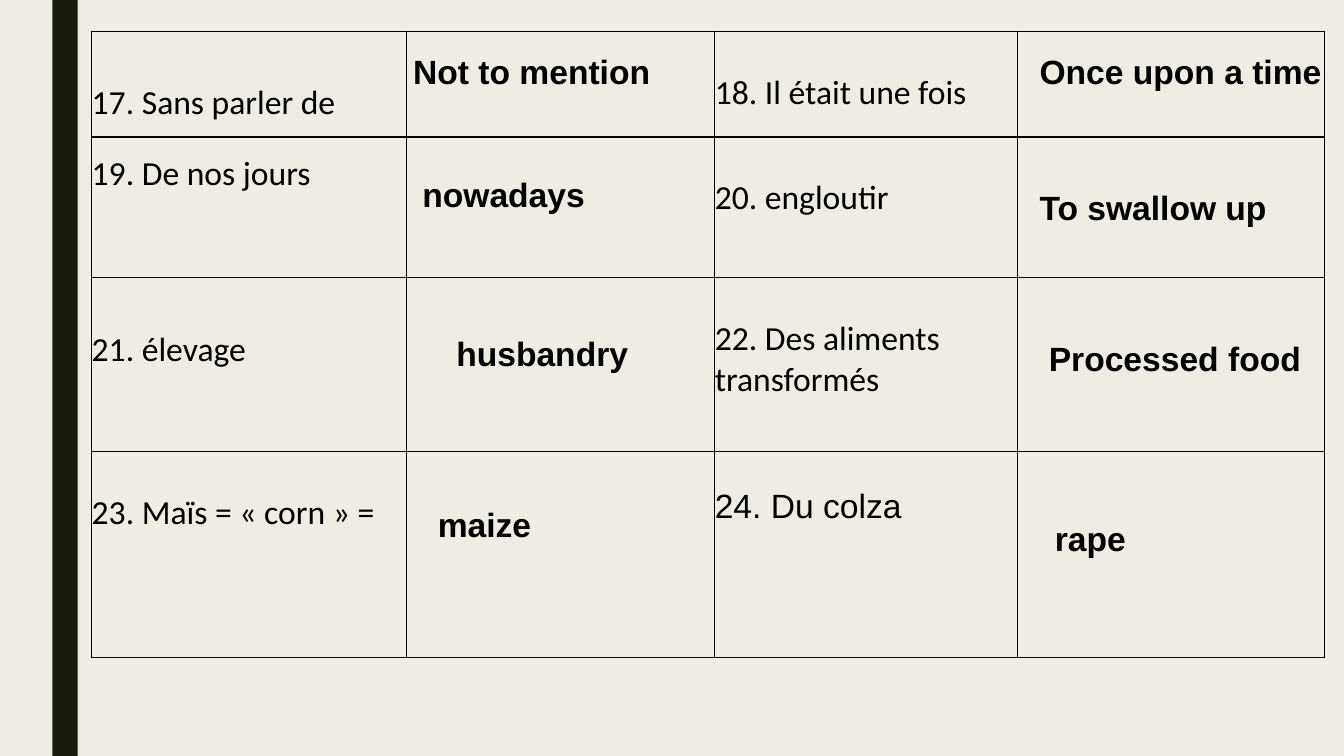
from dataclasses import dataclass

from lxml import etree
from pptx import Presentation
from pptx import util as u
from pptx.dml.color import RGBColor
from pptx.enum import shapes, text
from pptx.oxml import ns


@dataclass(frozen=True)
class Theme:
    paper: str = "EFEDE3"
    bar: str = "191B0E"
    ink: str = "000000"
    size: int = 24
    clue_font: str = "Calibri"
    answer_font: str = "Arial"
    border: int = 1


class VocabularySlide:
    """One page laid out on the columns and rows of its table."""

    def __init__(self, deck, theme, left, top, columns, rows):
        self.theme = theme
        self.columns, self.rows = columns, rows
        self.left, self.top = left, top
        self.height = deck.slide_height
        self.page = deck.slides.add_slide(deck.slide_layouts[6])
        fill = self.page.background.fill
        fill.solid()
        fill.fore_color.rgb = RGBColor.from_string(theme.paper)

    def place(self, row, column, x, y):
        """Point in a cell, with x and y as shares of that cell."""
        left = self.left + sum(self.columns[:column]) + x * self.columns[column]
        top = self.top + sum(self.rows[:row]) + y * self.rows[row]
        return u.Inches(left), u.Inches(top)

    def set_words(self, frame, words, font_name, bold=False):
        para = frame.paragraphs[0]
        para.text = words
        font = para.font
        font.name, font.size, font.bold = font_name, u.Pt(self.theme.size), bold
        font.color.rgb = RGBColor.from_string(self.theme.ink)

    def side_bar(self, left, width):
        bar = self.page.shapes.add_shape(
            shapes.MSO_SHAPE.RECTANGLE, u.Inches(left), 0, u.Inches(width), self.height)
        bar.shadow.inherit = False
        bar.fill.solid()
        bar.fill.fore_color.rgb = RGBColor.from_string(self.theme.bar)
        bar.line.fill.background()

    def outline(self, cell):
        properties = cell._tc.get_or_add_tcPr()
        for position, side in enumerate(("lnL", "lnR", "lnT", "lnB")):
            line = etree.Element(ns.qn(f"a:{side}"), w=str(u.Pt(self.theme.border)))
            fill = etree.SubElement(line, ns.qn("a:solidFill"))
            etree.SubElement(fill, ns.qn("a:srgbClr"), val=self.theme.ink)
            properties.insert(position, line)

    def table(self):
        frame = self.page.shapes.add_table(
            len(self.rows), len(self.columns), *self.place(0, 0, 0, 0),
            u.Inches(sum(self.columns)), u.Inches(sum(self.rows)))
        grid = frame.table
        grid.first_row = grid.horz_banding = False
        for column, width in zip(grid.columns, self.columns):
            column.width = u.Inches(width)
        for row, height in zip(grid.rows, self.rows):
            row.height = u.Inches(height)
        for cell in grid.iter_cells():
            cell.margin_left = cell.margin_right = cell.margin_top = cell.margin_bottom = 0
            cell.fill.background()
            self.outline(cell)
        return grid

    def clue(self, grid, row, column, words, drop, font_name):
        cell = grid.cell(row, column)
        cell.margin_top = u.Inches(drop * self.rows[row])
        self.set_words(cell.text_frame, words, font_name)

    def answer(self, row, column, words, x, y, width, height):
        box = self.page.shapes.add_textbox(
            *self.place(row, column, x, y),
            u.Inches(width * self.columns[column]), u.Inches(height * self.rows[row]))
        frame = box.text_frame
        frame.word_wrap = True
        frame.auto_size = text.MSO_AUTO_SIZE.SHAPE_TO_FIT_TEXT
        self.set_words(frame, words, self.theme.answer_font, bold=True)


THEME = Theme()

# Row, column, words, drop as a share of the row, font
CLUES = [
    (0, 0, "17. Sans parler de", 0.49, THEME.clue_font),
    (0, 2, "18. Il était une fois", 0.39, THEME.clue_font),
    (1, 0, "19. De nos jours", 0.12, THEME.clue_font),
    (1, 2, "20. engloutir", 0.29, THEME.clue_font),
    (2, 0, "21. élevage", 0.3, THEME.clue_font),
    (2, 2, "22. Des aliments transformés", 0.24, THEME.clue_font),
    (3, 0, "23. Maïs = « corn » =", 0.2, THEME.clue_font),
    (3, 2, "24. Du colza", 0.18, THEME.answer_font),
]

# Row, column, words, then x, y, width and height as shares of the cell
ANSWERS = [
    (0, 1, "Not to mention", -0.01, 0.14, 0.95, 0.87),
    (0, 3, "Once upon a time", 0.04, 0.14, 1.03, 0.87),
    (1, 1, "nowadays", 0.02, 0.23, 0.79, 0.65),
    (1, 3, "To swallow up", 0.04, 0.32, 0.93, 0.65),
    (2, 1, "husbandry", 0.13, 0.29, 0.95, 0.29),
    (2, 3, "Processed food", 0.07, 0.32, 0.93, 0.29),
    (3, 1, "maize", 0.07, 0.23, 0.95, 0.64),
    (3, 3, "rape", 0.09, 0.3, 0.79, 0.25),
]


def main():
    deck = Presentation()
    deck.slide_width, deck.slide_height = u.Inches(13.33), u.Inches(7.5)
    slide = VocabularySlide(deck, THEME, left=0.91, top=0.31,
                            columns=[3.12, 3.06, 3, 3.05], rows=[1.05, 1.39, 1.73, 2.04])
    # Side bar
    slide.side_bar(left=0.52, width=0.25)
    # French expressions
    grid = slide.table()
    for clue in CLUES:
        slide.clue(grid, *clue)
    # English answers
    for answer in ANSWERS:
        slide.answer(*answer)
    deck.save("out.pptx")


if __name__ == "__main__":
    main()
